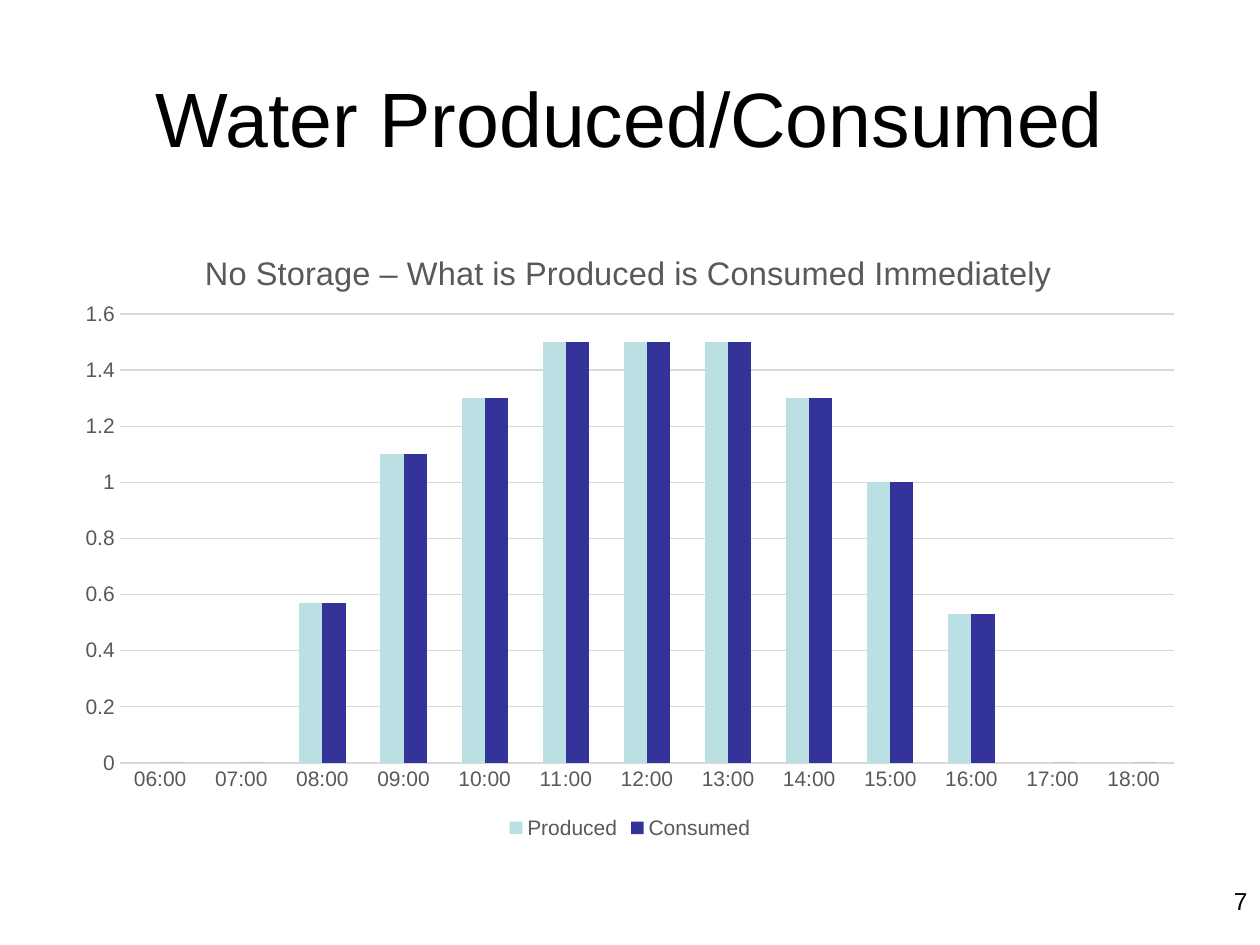
from pptx import Presentation
from pptx.chart.data import CategoryChartData
from pptx.dml.color import RGBColor
from pptx.enum.chart import XL_CHART_TYPE as ChartType, XL_LEGEND_POSITION as LegendSpot, XL_TICK_MARK as Tick
from pptx.enum.text import MSO_ANCHOR as Anchor, PP_ALIGN as Align
from pptx.oxml import parse_xml
from pptx.oxml.ns import nsdecls, qn
from pptx.util import Inches, Pt

TITLE_ONLY = 5
GREY, RULE, INK = "595959", "D9D9D9", "000000"
HOURS = [f"{hour:02d}:00" for hour in range(6, 19)]
LITRES = [0, 0, 0.57, 1.1, 1.3, 1.5, 1.5, 1.5, 1.3, 1, 0.53, 0, 0]
SERIES_COLOURS = {"Produced": "BBE0E3", "Consumed": "333399"}


def colour(hex_text):
    return RGBColor.from_string(hex_text)


def apply(target, formats):
    for name, value in formats.items():
        setattr(target, name, value)


def place_inside_chart(element, index, **shares):
    old = element.find(qn("c:layout"))
    if old is not None:
        element.remove(old)
    target = '<c:layoutTarget val="inner"/>' if "w" in shares else ""
    modes = "".join(f'<c:{side}Mode val="edge"/>' for side in "xy")
    values = "".join(f'<c:{side} val="{share}"/>' for side, share in shares.items())
    element.insert(index, parse_xml(
        f'<c:layout {nsdecls("c")}><c:manualLayout>{target}{modes}{values}'
        "</c:manualLayout></c:layout>"))


class Deck:
    columns, rows = 200, 150
    face = "Arial"

    def __init__(self, width, height):
        self.show = Presentation()
        apply(self.show, {"slide_width": Inches(width), "slide_height": Inches(height)})
        self.slide = self.show.slides.add_slide(self.show.slide_layouts[TITLE_ONLY])

    def area(self, column, row, across, down):
        unit_x = self.show.slide_width / self.columns
        unit_y = self.show.slide_height / self.rows
        return [round(n) for n in (column * unit_x, row * unit_y, across * unit_x, down * unit_y)]

    def style(self, font, size, ink):
        apply(font, {"name": self.face, "size": Pt(size), "bold": False})
        font.color.rgb = colour(ink)

    def set_words(self, frame, words, size, align, anchor):
        apply(frame, {"text": words, "word_wrap": True, "vertical_anchor": anchor})
        line = frame.paragraphs[0]
        line.alignment = align
        self.style(line.runs[0].font, size, INK)

    def title(self, words, *spot):
        heading = self.slide.shapes.title
        apply(heading, dict(zip(("left", "top", "width", "height"), self.area(*spot))))
        self.set_words(heading.text_frame, words, 44, Align.CENTER, Anchor.MIDDLE)

    def page_number(self, words, *spot):
        box = self.slide.shapes.add_textbox(*self.area(*spot))
        self.set_words(box.text_frame, words, 14, Align.RIGHT, Anchor.TOP)

    def axis(self, axis, **formats):
        apply(axis, {"major_tick_mark": Tick.NONE, "minor_tick_mark": Tick.NONE, **formats})
        self.style(axis.tick_labels.font, 12, GREY)

    def rule(self, line):
        line.color.rgb = colour(RULE)
        line.width = Pt(0.75)

    def column_chart(self, caption, hours, series, *spot):
        data = CategoryChartData()
        data.categories = hours
        for name, values in series.items():
            data.add_series(name, values)
        chart = self.slide.shapes.add_chart(
            ChartType.COLUMN_CLUSTERED, *self.area(*spot), data).chart
        self.style(chart.font, 10, INK)

        chart.chart_title.text_frame.text = caption
        self.style(chart.chart_title.text_frame.paragraphs[0].runs[0].font, 18.6, GREY)

        self.axis(chart.category_axis, has_major_gridlines=False)
        self.rule(chart.category_axis.format.line)
        self.axis(chart.value_axis, has_major_gridlines=True,
                  minimum_scale=0, maximum_scale=1.6, major_unit=0.2)
        self.rule(chart.value_axis.major_gridlines.format.line)
        chart.value_axis.format.line.fill.background()

        chart.has_legend = True
        apply(chart.legend, {"position": LegendSpot.BOTTOM, "include_in_layout": False})
        self.style(chart.legend.font, 12, GREY)

        plot = chart.plots[0]
        apply(plot, {"gap_width": 150, "overlap": 0, "vary_by_categories": False})
        for bars in plot.series:
            bars.format.fill.solid()
            bars.format.fill.fore_color.rgb = colour(SERIES_COLOURS[bars.name])

        chart_root = chart.element.chart
        place_inside_chart(chart_root.find(qn("c:title")), 1, x=0.12, y=0.04)
        place_inside_chart(chart_root.plotArea, 0, x=0.05, y=0.15, w=0.93, h=0.72)


def main():
    deck = Deck(10, 7.5)
    deck.title("Water Produced/Consumed", 10, 6, 180, 25)
    deck.column_chart("No Storage – What is Produced is Consumed Immediately",
                      HOURS, {name: LITRES for name in SERIES_COLOURS}, 10, 35, 180, 99)
    deck.page_number("7", 153.4, 139.6, 46.6, 10.4)
    deck.show.save("out.pptx")


if __name__ == "__main__":
    main()
